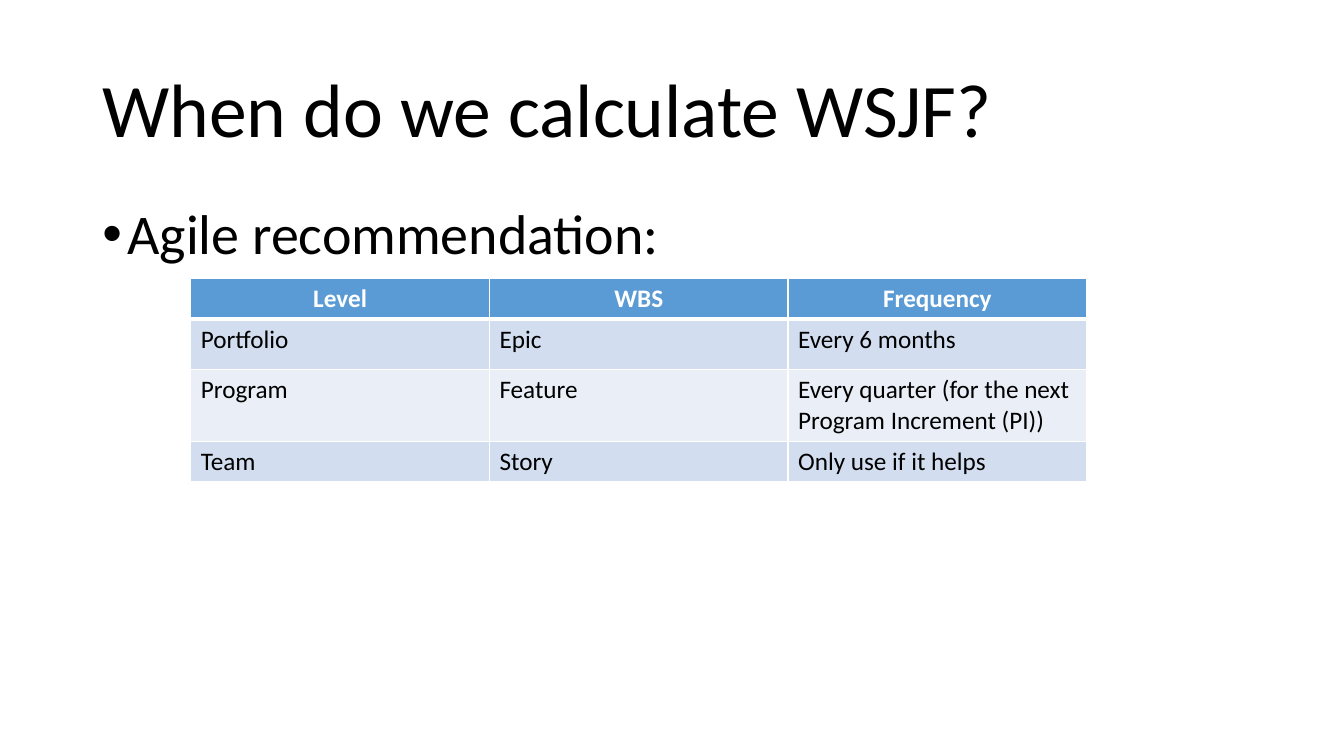
from pptx import Presentation
from pptx.dml.color import RGBColor as Color
from pptx.enum.text import MSO_ANCHOR as Anchor, PP_ALIGN as Align
from pptx.oxml import parse_xml
from pptx.oxml.ns import nsdecls
from pptx.util import Pt

TITLE = "When do we calculate WSJF?"
BULLET = "Agile recommendation:"
ROWS = [
    ("Level", "WBS", "Frequency"),
    ("Portfolio", "Epic", "Every 6 months"),
    ("Program", "Feature", "Every quarter (for the next Program Increment (PI))"),
    ("Team", "Story", "Only use if it helps"),
]
ROW_HEIGHTS = (29.2, 36, 51, 29.2)
COLUMN_WIDTH = 213.33
TABLE_LEFT, TABLE_TOP = 136.3, 198.9
TEXT_LEFT, TEXT_WIDTH = 66, 828
BULLET_INDENT = 18

THEME = {
    "font": "Calibri", "title": 54, "body": 40, "cell": 18,
    "ink": "000000", "light": "FFFFFF",
    "header": "5B9BD5", "bands": ("EAEFF7", "D2DEEF"),
}


def write(frame, text, size, color=THEME["ink"], bold=False,
          align=Align.LEFT, anchor=Anchor.TOP, spacing=None, bullet=None):
    frame.word_wrap = True
    frame.vertical_anchor = anchor
    para = frame.paragraphs[0]
    para.alignment = align
    if spacing:
        para.line_spacing = spacing
    if bullet:
        props = para._p.get_or_add_pPr()
        props.set("marL", str(Pt(BULLET_INDENT)))
        props.set("indent", str(-Pt(BULLET_INDENT)))
        props.append(parse_xml(f'<a:buFont {nsdecls("a")} typeface="Arial"/>'))
        props.append(parse_xml(f'<a:buChar {nsdecls("a")} char="{bullet}"/>'))
    span = para.add_run()
    span.text = text
    span.font.name = THEME["font"]
    span.font.size = Pt(size)
    span.font.bold = bold
    span.font.color.rgb = Color.from_string(color)


def add_borders(cell, top, bottom):
    props = cell._tc.get_or_add_tcPr()
    widths = {"lnL": 1, "lnR": 1, "lnT": top, "lnB": bottom}
    for place, (side, width) in enumerate(widths.items()):
        props.insert(place, parse_xml(
            f'<a:{side} {nsdecls("a")} w="{Pt(width)}"><a:solidFill>'
            f'<a:srgbClr val="{THEME["light"]}"/></a:solidFill></a:{side}>'))


def add_text(page, text, top, height, size, **style):
    box = page.shapes.add_textbox(Pt(TEXT_LEFT), Pt(top), Pt(TEXT_WIDTH), Pt(height))
    write(box.text_frame, text, size, spacing=0.9, **style)


def add_levels_table(page):
    table = page.shapes.add_table(
        len(ROWS), len(ROWS[0]), Pt(TABLE_LEFT), Pt(TABLE_TOP),
        Pt(COLUMN_WIDTH * len(ROWS[0])), Pt(sum(ROW_HEIGHTS))).table
    for column in table.columns:
        column.width = Pt(COLUMN_WIDTH)
    for r, (labels, height) in enumerate(zip(ROWS, ROW_HEIGHTS)):
        table.rows[r].height = Pt(height)
        header = r == 0
        fill = THEME["header"] if header else THEME["bands"][r % 2]
        for c, label in enumerate(labels):
            cell = table.cell(r, c)
            cell.fill.solid()
            cell.fill.fore_color.rgb = Color.from_string(fill)
            add_borders(cell, top=3 if r == 1 else 1, bottom=3 if header else 1)
            write(cell.text_frame, label, THEME["cell"], bold=header,
                  color=THEME["light"] if header else THEME["ink"],
                  align=Align.CENTER if header else Align.LEFT)


def main():
    deck = Presentation()
    deck.slide_width, deck.slide_height = Pt(960), Pt(540)
    page = deck.slides.add_slide(deck.slide_layouts[6])
    add_text(page, TITLE, 28.8, 104.4, THEME["title"], anchor=Anchor.MIDDLE)
    add_text(page, BULLET, 144, 312.5, THEME["body"], bullet="•")
    add_levels_table(page)
    deck.save("out.pptx")


if __name__ == "__main__":
    main()
